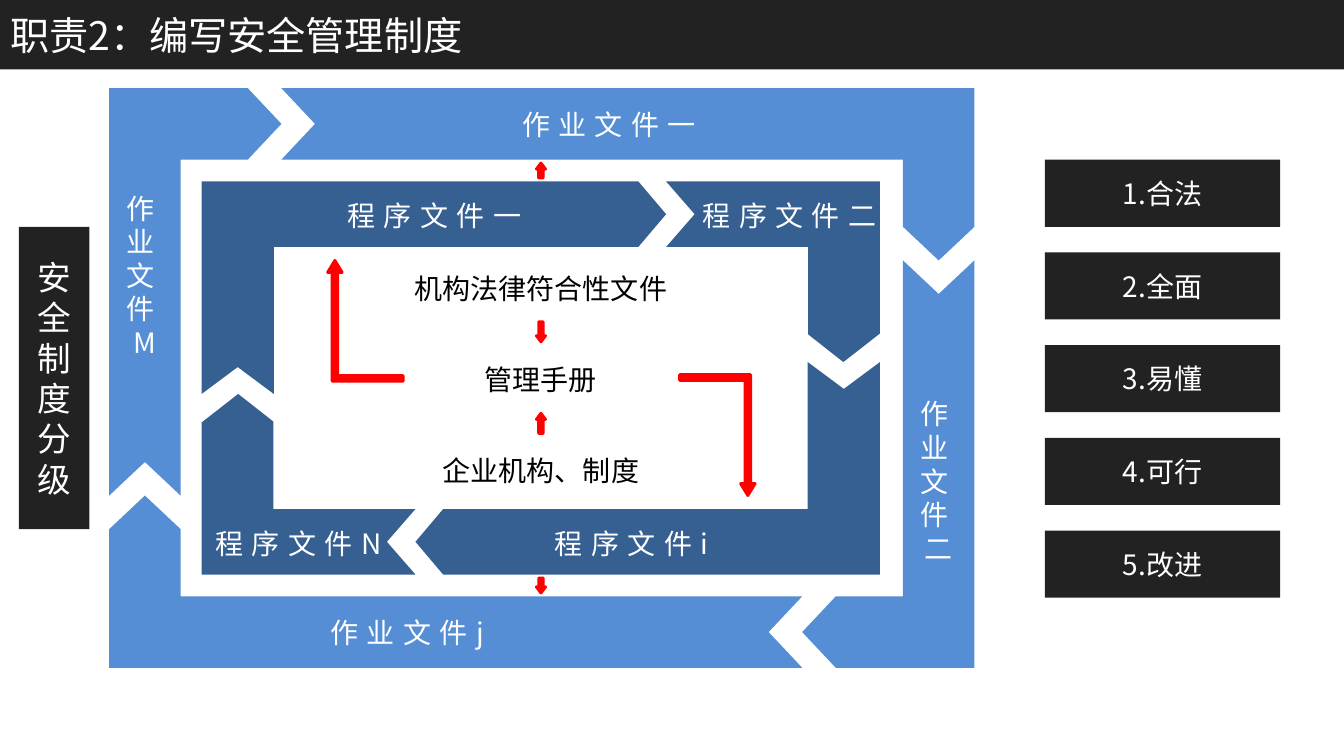
from lxml.etree import SubElement
from pptx import Presentation
from pptx.dml.color import RGBColor
from pptx.enum.shapes import MSO_SHAPE as Preset
from pptx.enum.text import MSO_ANCHOR as Anchor, PP_ALIGN as Align
from pptx.oxml.ns import qn
from pptx.util import Pt

COLORS = {
    "dark": "222222",
    "outer": "558ED5",
    "inner": "376092",
    "arrow": "FF0000",
    "white": "FFFFFF",
    "black": "000000",
}
FONT = "Noto Sans CJK SC"
COLUMNS, ROWS, CELL = 160, 90, 76200


def cells(*values):
    return [round(value * CELL) for value in values]


def half_turn(points, center):
    return [(2 * center[0] - x, 2 * center[1] - y) for x, y in points]


class SlideBuilder:
    def __init__(self, slide):
        self.slide = slide
        self.shapes = slide.shapes

    def paint(self, shape, color, line_width=0):
        shape.shadow.inherit = False
        shape.fill.solid()
        shape.fill.fore_color.rgb = RGBColor.from_string(COLORS[color])
        if line_width:
            shape.line.color.rgb = RGBColor.from_string(COLORS[color])
            shape.line.width = Pt(line_width)
        else:
            shape.line.fill.background()

    def set_text(self, shape, text, size=20, color="white", align=Align.CENTER,
                 tracking=0, line_spacing=None, wrap=True):
        frame = shape.text_frame
        frame.word_wrap = wrap
        frame.vertical_anchor = Anchor.MIDDLE
        paragraph = frame.paragraphs[0]
        paragraph.alignment = align
        if line_spacing:
            paragraph.line_spacing = line_spacing
        run = paragraph.add_run()
        run.text = text
        for font in (paragraph.font, run.font):
            font.name = FONT
            font.size = Pt(size)
            font.color.rgb = RGBColor.from_string(COLORS[color])
        properties = run._r.get_or_add_rPr()
        SubElement(properties, qn("a:ea")).set("typeface", FONT)
        if tracking:
            properties.set("spc", str(tracking * 100))

    def title(self, text, place):
        heading = self.shapes.title
        heading.left, heading.top, heading.width, heading.height = cells(*place)
        heading.fill.solid()
        heading.fill.fore_color.rgb = RGBColor.from_string(COLORS["dark"])
        self.set_text(heading, text, size=28, align=Align.LEFT)

    def box(self, text, place, fill="dark", **style):
        panel = self.shapes.add_shape(Preset.RECTANGLE, *cells(*place))
        self.paint(panel, fill)
        self.set_text(panel, text, **style)

    def label(self, text, place):
        self.set_text(self.shapes.add_textbox(*cells(*place)), text, tracking=6)

    def band(self, points, color):
        start, *rest = [cells(*point) for point in points]
        outline = self.shapes.build_freeform(*start)
        outline.add_line_segments(rest, close=True)
        self.paint(outline.convert_to_shape(), color)

    def arrow(self, preset, place, adjustments, rotation=0, flip=False):
        pointer = self.shapes.add_shape(preset, *cells(*place))
        for index, value in enumerate(adjustments):
            pointer.adjustments[index] = value
        pointer.rotation = rotation
        if flip:
            pointer.element.spPr.find(qn("a:xfrm")).set("flipH", "1")
        self.paint(pointer, "arrow", line_width=2)


def main():
    deck = Presentation()
    deck.slide_width, deck.slide_height = cells(COLUMNS, ROWS)
    builder = SlideBuilder(deck.slides.add_slide(deck.slide_layouts[5]))

    builder.title("职责2：编写安全管理制度", (0, 0, COLUMNS, 8.25))
    builder.box("安全制度分级", (2.25, 27, 8.4, 36), size=24)

    outer_top = [(33.5, 10.5), (116, 10.5), (116, 27), (111.75, 31),
                 (107.5, 27), (107.5, 19), (33.5, 19), (37.5, 14.75)]
    outer_right = [(107.5, 31), (111.75, 35), (116, 31), (116, 79.5),
                   (99.5, 79.5), (95.5, 75.25), (99.5, 71), (107.5, 71)]
    inner_left = [(24, 21.6), (76, 21.6), (79.3, 25.5), (76, 29.4),
                  (32.6, 29.4), (32.6, 46.9), (28.3, 43.7), (24, 46.9)]
    inner_right = [(79.3, 21.6), (104.76, 21.6), (104.76, 39.7), (100.4, 43.1),
                   (96.2, 39.8), (96.2, 29.4), (79.3, 29.4), (82.7, 25.5)]
    rings = [
        ("outer", (64.5, 45), (outer_top, outer_right)),
        ("inner", (64.38, 45), (inner_left, inner_right)),
    ]
    for color, center, bands in rings:
        for points in bands:
            builder.band(points, color)
            builder.band(half_turn(points, center), color)

    documents = [
        ("作业文件一", (37, 10.5, 71, 8.5)),
        ("作业文件j", (13, 71, 71, 8.5)),
        ("作业文件二", (107.5, 35, 8.5, 44.5)),
        ("作业文件M", (13, 10.5, 8.5, 44.5)),
        ("程序文件一", (24, 21.4, 55.4, 8.5)),
        ("程序文件二", (79.3, 21.4, 29.4, 8.5)),
        ("程序文件i", (60.5, 60.4, 29.4, 8.5)),
        ("程序文件N", (21.2, 60.4, 28.7, 8.5)),
    ]
    for text, place in documents:
        builder.label(text, place)

    foundations = ["机构法律符合性文件", "管理手册", "企业机构、制度"]
    for index, text in enumerate(foundations):
        builder.box(text, (46, 31.3 + 10.86 * index, 36.8, 5.6), fill="white",
                    color="black", line_spacing=1.1, wrap=False)

    for top, height, rotation in [(19.4, 1.8, 0), (38.3, 2.4, 180),
                                  (49.2, 2.4, 0), (68.8, 1.8, 180)]:
        builder.arrow(Preset.UP_ARROW, (63.85, top, 1.1, height),
                      (0.5, 0.667), rotation)
    for left, top, rotation in [(39, 31, 0), (80.9, 44.6, 180)]:
        builder.arrow(Preset.BENT_UP_ARROW, (left, top, 9, 14.4),
                      (0.076, 0.097, 0.16), rotation, flip=True)

    principles = ["合法", "全面", "易懂", "可行", "改进"]
    for index, principle in enumerate(principles):
        builder.box(f"{index + 1}.{principle}",
                    (124.4, 19 + 11.04 * index, 28, 8))

    deck.save("out.pptx")


if __name__ == "__main__":
    main()
